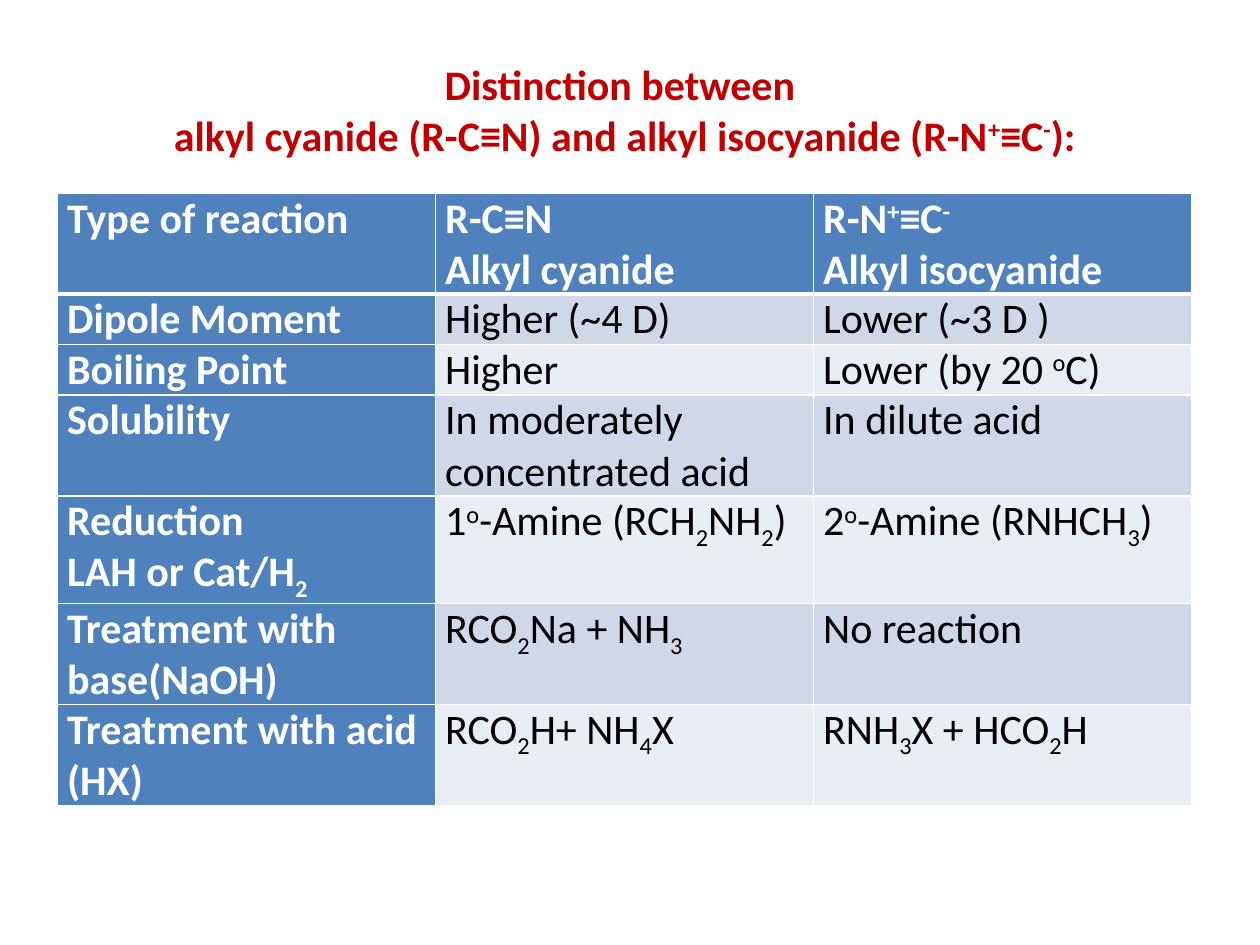
from pptx import Presentation
from pptx.dml.color import RGBColor
from pptx.enum.text import MSO_AUTO_SIZE, PP_ALIGN
from pptx.oxml.ns import qn
from pptx.util import Pt
from lxml.etree import SubElement

RED = RGBColor(0xC0, 0x00, 0x00)
WHITE = RGBColor(0xFF, 0xFF, 0xFF)
BLACK = RGBColor(0x00, 0x00, 0x00)
BLUE = RGBColor(0x4F, 0x81, 0xBD)
BANDS = [RGBColor(0xE9, 0xED, 0xF4), RGBColor(0xD0, 0xD8, 0xE8)]

# "^" raises the next letter, "_" lowers it
SHIFTS = {"^": "30000", "_": "-25000"}

TITLE = ["Distinction between ",
         "alkyl cyanide (R-C≡N) and alkyl isocyanide (R-N^+≡C^-):"]

ROWS = [
    ("Type of reaction", "R-C≡N\nAlkyl cyanide", "R-N^+≡C^-\nAlkyl isocyanide"),
    ("Dipole Moment", "Higher (~4 D)", "Lower (~3 D )"),
    ("Boiling Point", "Higher", "Lower (by 20 ^oC)"),
    ("Solubility", "In moderately concentrated acid", "In dilute acid"),
    ("Reduction\nLAH or Cat/H_2", "1^o-Amine (RCH_2NH_2)",
     "2^o-Amine (RNHCH_3)"),
    ("Treatment with base(NaOH)", "RCO_2Na + NH_3", "No reaction"),
    ("Treatment with acid (HX)", "RCO_2H+ NH_4X", "RNH_3X + HCO_2H"),
]
LINE = 28.8
LINES = [2, 1, 1, 2, 2, 2, 2]


def split(text):
    """Return (words, mark) pairs, where mark is "^", "_" or empty."""
    parts, plain, mark = [], "", ""
    for char in text:
        if char in SHIFTS:
            mark = char
        elif mark:
            parts += [(plain, ""), (char, mark)]
            plain, mark = "", ""
        else:
            plain += char
    return [part for part in parts + [(plain, "")] if part[0]]


def write(frame, lines, color, bold, align=PP_ALIGN.LEFT):
    frame.text = "\n".join([""] * len(lines))
    for para, line in zip(frame.paragraphs, lines):
        para.alignment = align
        for words, mark in split(line):
            run = para.add_run()
            run.text = words
            font = run.font
            font.name, font.size, font.bold = "Calibri", Pt(24), bold
            font.color.rgb = color
            if mark:
                run._r.get_or_add_rPr().set("baseline", SHIFTS[mark])


def add_title(slide):
    box = slide.shapes.add_textbox(Pt(18), Pt(30), Pt(678), Pt(65.5))
    frame = box.text_frame
    frame.word_wrap = True
    frame.auto_size = MSO_AUTO_SIZE.SHAPE_TO_FIT_TEXT
    write(frame, TITLE, RED, True, PP_ALIGN.CENTER)


def add_edges(cell, top, low):
    props = cell._tc.get_or_add_tcPr()
    for side, width in (("L", 1), ("R", 1), ("T", top), ("B", low)):
        edge = SubElement(props, qn("a:ln" + side), w=str(Pt(width)))
        fill = SubElement(edge, qn("a:solidFill"))
        SubElement(fill, qn("a:srgbClr"), val=str(WHITE))


def fill_cell(cell, text, row, col):
    head = row == 0 or col == 0
    cell.margin_left = cell.margin_right = Pt(5.4)
    cell.margin_top = cell.margin_bottom = 0
    # Thick rule under the header row
    add_edges(cell, 3 if row == 1 else 1, 3 if row == 0 else 1)
    cell.fill.solid()
    cell.fill.fore_color.rgb = BLUE if head else BANDS[row % 2]
    write(cell.text_frame, text.split("\n"), WHITE if head else BLACK, head)


def add_grid(slide):
    table = slide.shapes.add_table(len(ROWS), 3, Pt(33), Pt(110.4),
                                   Pt(648), Pt(LINE * sum(LINES))).table
    for row, texts in enumerate(ROWS):
        table.rows[row].height = Pt(LINE * LINES[row])
        for col, text in enumerate(texts):
            fill_cell(table.cell(row, col), text, row, col)


def main():
    deck = Presentation()
    deck.slide_width, deck.slide_height = Pt(720), Pt(540)
    slide = deck.slides.add_slide(deck.slide_layouts[6])
    add_title(slide)
    add_grid(slide)
    deck.save("out.pptx")


if __name__ == "__main__":
    main()
